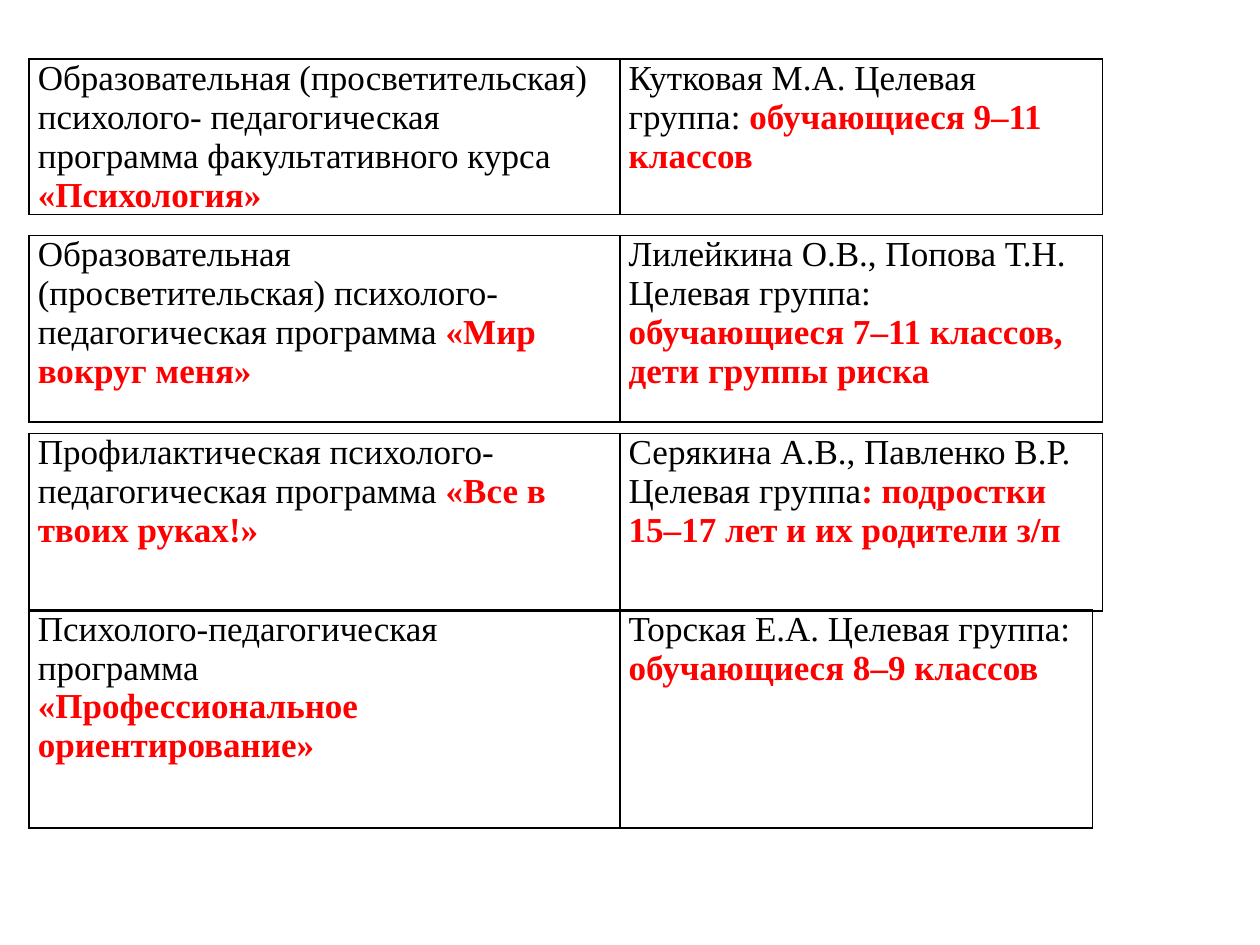
from lxml.etree import SubElement
from pptx import Presentation
from pptx.dml.color import RGBColor
from pptx.oxml.ns import qn
from pptx.util import Inches, Pt

THEME = {
    "font": "Times New Roman",
    "size": Pt(20),
    "text": RGBColor(0, 0, 0),
    "accent": RGBColor(255, 0, 0),
    "border": "000000",
    "border_width": Pt(1),
}
LEFT = 0.23
PROGRAM_WIDTH = 4.69
INDENT = 0.07
AUTHOR_RIGHT_INDENT = 0.15

# Each cell is a list of paragraphs: (plain text, highlighted text).
PROGRAMS = [
    {"top": 0.47, "height": 1.17, "author_width": 3.83, "right_indent": 0.18,
     "program": [("Образовательная (просветительская) психолого- педагогическая "
                  "программа факультативного курса ", "«Психология»")],
     "author": [("Кутковая М.А. Целевая группа: ", "обучающиеся 9–11 классов")]},
    {"top": 1.87, "height": 1.48, "author_width": 3.83, "right_indent": 0.4,
     "program": [("Образовательная (просветительская) психолого- педагогическая "
                  "программа ", "«Мир вокруг меня»")],
     "author": [("Лилейкина О.В., Попова Т.Н. Целевая группа: ",
                 "обучающиеся 7–11 классов, дети группы риска")]},
    {"top": 3.44, "height": 1.41, "author_width": 3.83, "right_indent": 0.18,
     "program": [("Профилактическая психолого- педагогическая программа ",
                  "«Все в твоих руках!»")],
     "author": [("Серякина А.В., Павленко В.Р. Целевая группа",
                 ": подростки 15–17 лет и их родители з/п")]},
    {"top": 4.84, "height": 1.73, "author_width": 3.75, "right_indent": 0.18,
     "program": [("Психолого-педагогическая программа", ""),
                 ("", "«Профессиональное ориентирование»")],
     "author": [("Торская Е.А. Целевая группа: ", "обучающиеся 8–9 классов")]},
]


def add_borders(cell):
    properties = cell._tc.get_or_add_tcPr()
    for side in ("a:lnL", "a:lnR", "a:lnT", "a:lnB"):
        line = SubElement(properties, qn(side), w=str(THEME["border_width"]))
        fill = SubElement(line, qn("a:solidFill"))
        SubElement(fill, qn("a:srgbClr"), val=THEME["border"])


def fill_cell(cell, paragraphs, right_indent):
    cell.margin_left = cell.margin_right = cell.margin_top = cell.margin_bottom = 0
    add_borders(cell)
    cell.fill.background()
    for index, parts in enumerate(paragraphs):
        frame = cell.text_frame
        paragraph = frame.add_paragraph() if index else frame.paragraphs[0]
        properties = paragraph._p.get_or_add_pPr()
        properties.set("marL", str(Inches(INDENT)))
        properties.set("marR", str(Inches(right_indent)))
        properties.set("indent", "0")
        for text, color, bold in zip(parts, (THEME["text"], THEME["accent"]),
                                     (False, True)):
            if text:
                run = paragraph.add_run()
                run.text = text
                run.font.name = THEME["font"]
                run.font.size = THEME["size"]
                run.font.color.rgb = color
                run.font.bold = bold


def add_program(slide, program):
    widths = (PROGRAM_WIDTH, program["author_width"])
    table = slide.shapes.add_table(
        1, 2, Inches(LEFT), Inches(program["top"]),
        Inches(sum(widths)), Inches(program["height"])).table
    table.first_row = table.horz_banding = False
    for column, width in zip(table.columns, widths):
        column.width = Inches(width)
    fill_cell(table.cell(0, 0), program["program"], program["right_indent"])
    fill_cell(table.cell(0, 1), program["author"], AUTHOR_RIGHT_INDENT)


def main():
    presentation = Presentation()
    presentation.slide_width = Inches(10)
    presentation.slide_height = Inches(7.5)
    slide = presentation.slides.add_slide(presentation.slide_layouts[6])
    for program in PROGRAMS:
        add_program(slide, program)
    presentation.save("out.pptx")


if __name__ == "__main__":
    main()
